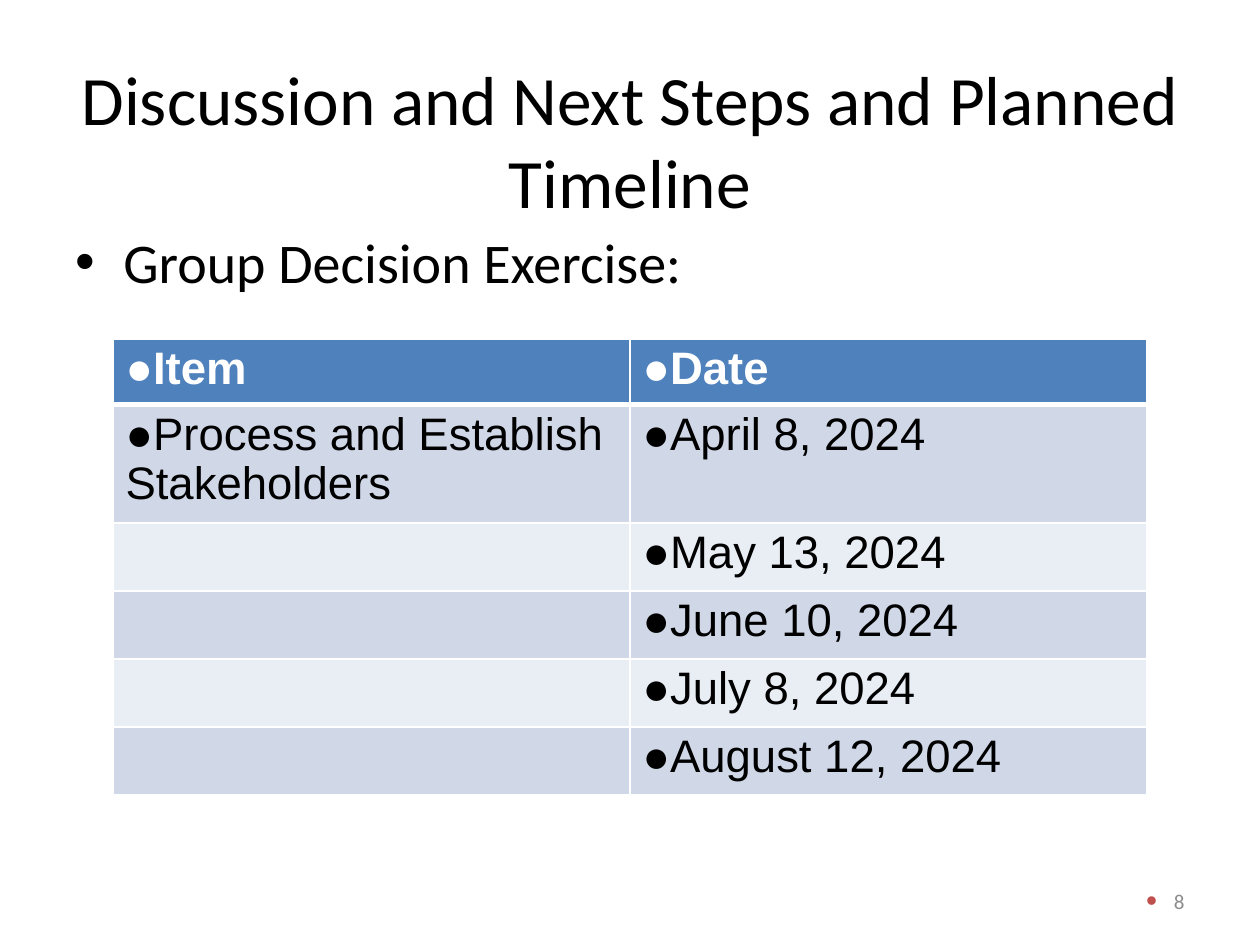
from pptx import Presentation
from pptx.dml.color import RGBColor
from pptx.enum.text import MSO_ANCHOR, MSO_AUTO_SIZE, PP_ALIGN
from pptx.oxml.ns import qn
from pptx.util import Pt
from lxml.etree import SubElement

TITLE = "Discussion and Next Steps and Planned Timeline"
BODY = "Group Decision Exercise:"
PAGE = "8"
ROWS = [
    ("Item", "Date"),
    ("Process and Establish Stakeholders", "April 8, 2024"),
    ("", "May 13, 2024"),
    ("", "June 10, 2024"),
    ("", "July 8, 2024"),
    ("", "August 12, 2024"),
]
HIGHS = [65, 114, 68, 68, 68, 68]
HEAD, BANDS = "4F81BD", ("D0D8E8", "E9EDF4")
BLACK, WHITE, GREY, RED = "000000", "FFFFFF", "8C8C8C", "C0504D"


def px(n):
    return round(n * 914400 / 126)


def rgb(code):
    return RGBColor.from_string(code)


def write(para, text, size, face, color, bold=False):
    run = para.add_run()
    run.text = text
    font = run.font
    font.size, font.name, font.bold = Pt(size), face, bold
    font.color.rgb = rgb(color)


def bullet(para, mark, dent=0, color=None, pct=100):
    props = para._p.get_or_add_pPr()
    props.set("marL", str(px(dent)))
    props.set("indent", str(-px(dent)))
    if color:
        SubElement(SubElement(props, qn("a:buClr")), qn("a:srgbClr"), val=color)
    SubElement(props, qn("a:buSzPct"), val=str(pct * 1000))
    SubElement(props, qn("a:buFont"), typeface="Arial")
    SubElement(props, qn("a:buChar"), char=mark)


def place(shape, left, top, width, height):
    shape.left, shape.top = px(left), px(top)
    shape.width, shape.height = px(width), px(height)


def box(slide, *area):
    frame = slide.shapes.add_textbox(*map(px, area)).text_frame
    frame.word_wrap = True
    return frame


def edge(cell, side, width):
    line = SubElement(cell._tc.get_or_add_tcPr(), qn("a:" + side), w=str(Pt(width)))
    SubElement(SubElement(line, qn("a:solidFill")), qn("a:srgbClr"), val=WHITE)


def grid(slide):
    shape = slide.shapes.add_table(len(ROWS), 2, px(113), px(339), px(1034), px(sum(HIGHS)))
    table = shape.table
    for r, (row, high) in enumerate(zip(ROWS, HIGHS)):
        table.rows[r].height = px(high)
        for c, text in enumerate(row):
            cell = table.cell(r, c)
            for side in ("lnL", "lnR", "lnT", "lnB"):
                thick = (side, r) in (("lnB", 0), ("lnT", 1))
                edge(cell, side, 3 if thick else 1)
            cell.fill.solid()
            cell.fill.fore_color.rgb = rgb(BANDS[(r - 1) % 2] if r else HEAD)
            if text:
                para = cell.text_frame.paragraphs[0]
                para.line_spacing = 0.97
                bullet(para, "●")
                write(para, text, 26, "Arial", BLACK if r else WHITE, r == 0)


def main():
    """Build the planned timeline slide."""
    deck = Presentation()
    deck.slide_width, deck.slide_height = px(1260), px(945)
    slide = deck.slides.add_slide(deck.slide_layouts[5])

    title = slide.shapes.title
    place(title, 63, 84, 1134, 111)
    frame = title.text_frame
    frame.auto_size = MSO_AUTO_SIZE.NONE
    frame.vertical_anchor = MSO_ANCHOR.MIDDLE
    para = frame.paragraphs[0]
    para.alignment = PP_ALIGN.CENTER
    write(para, TITLE, 39.6, "Calibri", BLACK)

    para = box(slide, 63, 221, 1134, 624).paragraphs[0]
    bullet(para, "•", 48)
    write(para, BODY, 32, "Calibri", BLACK)

    frame = box(slide, 903, 876, 294, 50)
    frame.vertical_anchor = MSO_ANCHOR.MIDDLE
    para = frame.paragraphs[0]
    para.alignment = PP_ALIGN.RIGHT
    bullet(para, "•", 28, RED, 150)
    write(para, PAGE, 12, "Calibri", GREY)

    grid(slide)
    deck.save("out.pptx")


if __name__ == "__main__":
    main()
